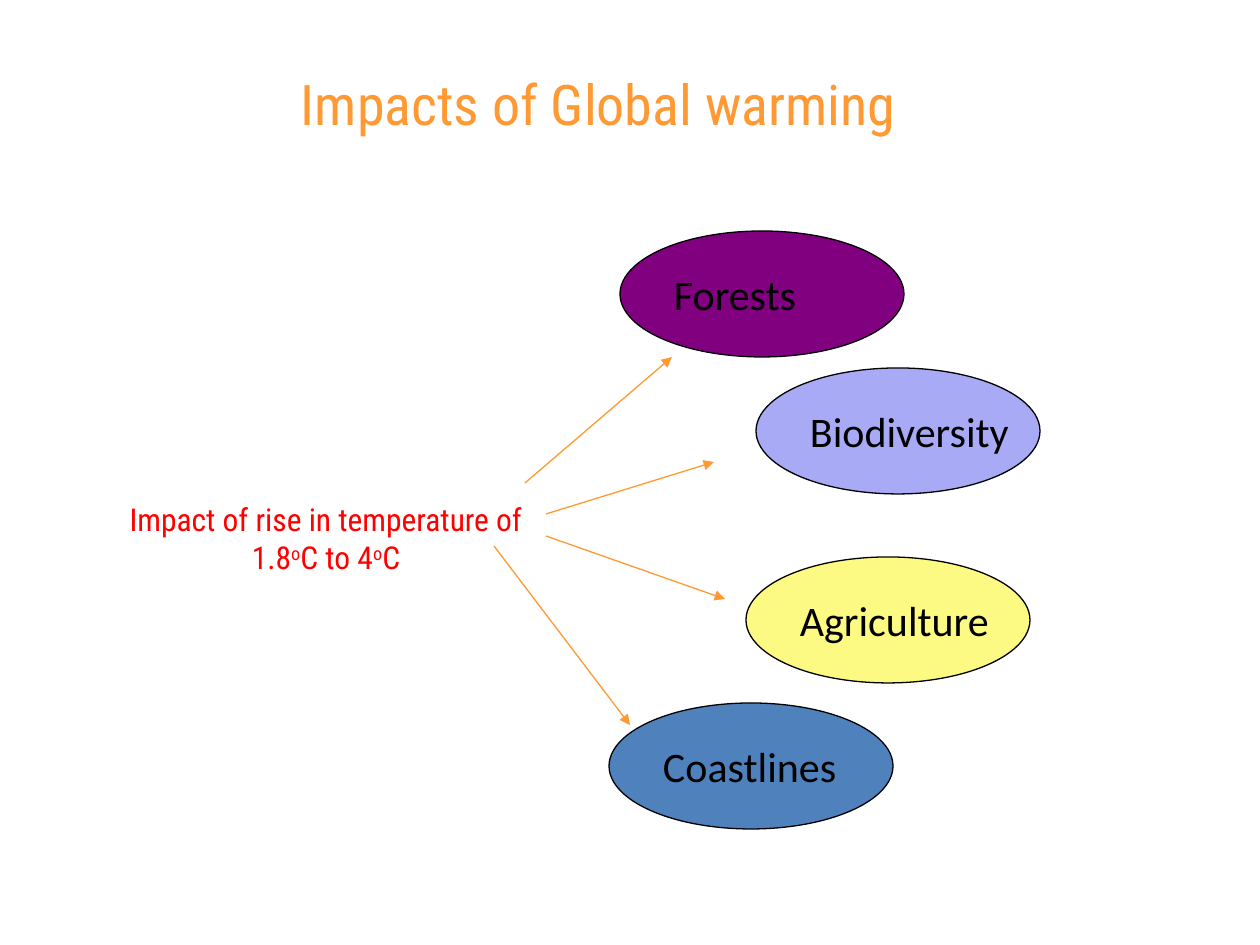
import pptx
import pptx.util
import pptx.dml.color
import pptx.enum.shapes
import pptx.enum.text
import pptx.oxml
import pptx.oxml.ns

RGBColor = pptx.dml.color.RGBColor
ALIGN = pptx.enum.text.PP_ALIGN
ANCHOR = pptx.enum.text.MSO_ANCHOR

ORANGE = RGBColor(0xFF, 0x99, 0x33)
RED = RGBColor(0xFF, 0x00, 0x00)
BLACK = RGBColor(0x00, 0x00, 0x00)
PURPLE = RGBColor(0x80, 0x00, 0x80)
LAVENDER = RGBColor(0xA8, 0xAA, 0xF6)
YELLOW = RGBColor(0xFD, 0xFA, 0x83)
BLUE = RGBColor(0x4F, 0x81, 0xBD)

# Content; lengths in px, 126 to the inch
TITLE = "Impacts of Global warming"
TITLE_BOX = (189, 63, 819, 81)
# Runs: text, raised or not
CAUSE = [("Impact of rise in temperature of 1.8", False), ("o", True),
         ("C to 4", False), ("o", True), ("C", False)]
CAUSE_BOX = (116, 494, 420, 89)
# Impact: label, fill, left and top of ellipse, arrow start, arrow end
IMPACTS = [
    ("Forests", PURPLE, (620, 231), (525, 483), (672, 357)),
    ("Biodiversity", LAVENDER, (756, 368), (546, 514), (714, 462)),
    ("Agriculture", YELLOW, (746, 557), (546, 536), (725, 599)),
    ("Coastlines", BLUE, (609, 703), (494, 546), (630, 725)),
]
ELLIPSE_SIZE = (284, 126)
LINE_WIDTH = pptx.util.Pt(0.75)


def px(*lengths):
    return [pptx.util.Emu(length * 914400 // 126) for length in lengths]


def write(shape, runs, *, font, size, color, align=ALIGN.LEFT,
          anchor=ANCHOR.TOP, wrap=True):
    frame = shape.text_frame
    frame.word_wrap = wrap
    frame.vertical_anchor = anchor
    paragraph = frame.paragraphs[0]
    paragraph.alignment = align
    for text, raised in runs:
        run = paragraph.add_run()
        run.text = text
        run.font.name = font
        run.font.size = pptx.util.Pt(size)
        run.font.color.rgb = color
        if raised:
            run.font._element.set("baseline", "30000")


def add_ellipse(slide, label, fill, corner):
    shape = slide.shapes.add_shape(pptx.enum.shapes.MSO_SHAPE.OVAL,
                                   *px(*corner, *ELLIPSE_SIZE))
    shape.shadow.inherit = False
    shape.fill.solid()
    shape.fill.fore_color.rgb = fill
    shape.line.color.rgb = BLACK
    shape.line.width = LINE_WIDTH
    write(shape, [(label, False)], font="Calibri", size=24, color=BLACK,
          anchor=ANCHOR.MIDDLE, wrap=False)


def add_arrow(slide, start, end):
    arrow = slide.shapes.add_connector(
        pptx.enum.shapes.MSO_CONNECTOR.STRAIGHT, *px(*start, *end))
    arrow.line.color.rgb = ORANGE
    arrow.line.width = LINE_WIDTH
    head = pptx.oxml.parse_xml(
        f'<a:tailEnd {pptx.oxml.ns.nsdecls("a")} type="triangle"/>')
    arrow.line._get_or_add_ln().append(head)
    arrow._element.spPr.append(pptx.oxml.parse_xml(
        f'<a:effectLst {pptx.oxml.ns.nsdecls("a")}/>'))


def main():
    presentation = pptx.Presentation()
    presentation.slide_width, presentation.slide_height = px(1260, 945)
    slide = presentation.slides.add_slide(presentation.slide_layouts[5])

    # Title
    title = slide.shapes.title
    title.left, title.top, title.width, title.height = px(*TITLE_BOX)
    write(title, [(TITLE, False)], font="Roboto Condensed", size=32,
          color=ORANGE, align=ALIGN.CENTER)

    # Cause on the left
    cause = slide.shapes.add_textbox(*px(*CAUSE_BOX))
    write(cause, CAUSE, font="Roboto Condensed", size=18, color=RED,
          align=ALIGN.CENTER)

    # Impacts on the right, each with its arrow
    for label, fill, corner, start, end in IMPACTS:
        add_ellipse(slide, label, fill, corner)
        add_arrow(slide, start, end)

    presentation.save("out.pptx")


if __name__ == "__main__":
    main()
